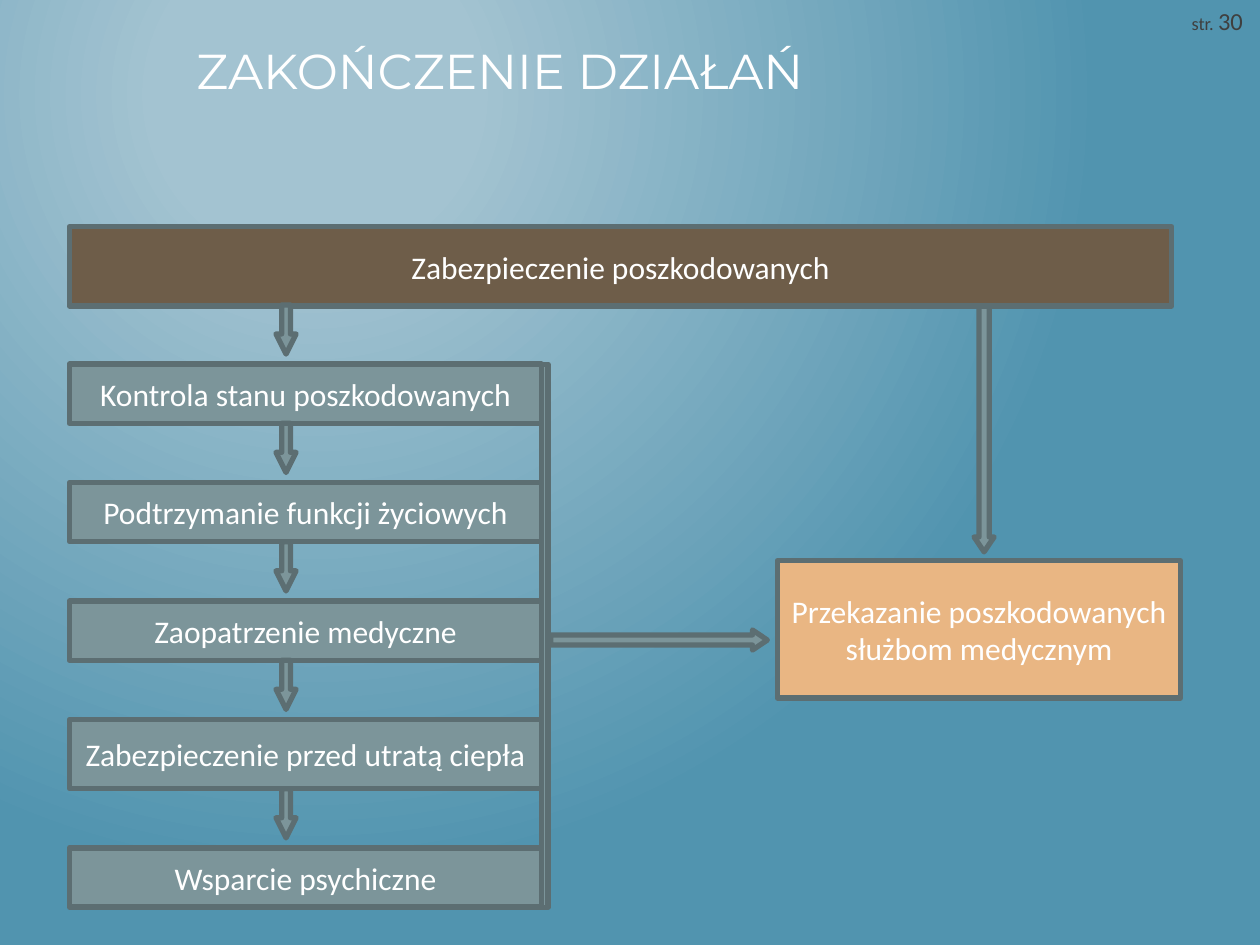
from lxml import etree
from pptx import Presentation
from pptx.dml.color import RGBColor
from pptx.enum import shapes, text
from pptx.oxml import ns
from pptx.util import Inches, Pt

WHITE = RGBColor(0xFF, 0xFF, 0xFF)
GREY = RGBColor(0x3F, 0x3F, 0x3F)
BROWN = RGBColor(0x6E, 0x5D, 0x49)
SLATE = RGBColor(0x7C, 0x95, 0x9A)
ORANGE = RGBColor(0xE9, 0xB6, 0x83)
OUTLINE = RGBColor(0x5C, 0x6E, 0x72)
GLOW = RGBColor(0xA3, 0xC3, 0xD1)
BLUE = RGBColor(0x51, 0x94, 0xAF)

STEPS = [  # wording, box height
    ("Kontrola stanu poszkodowanych", 0.47),
    ("Podtrzymanie funkcji życiowych", 0.47),
    ("Zaopatrzenie medyczne", 0.47),
    ("Zabezpieczenie przed utratą ciepła", 0.55),
    ("Wsparcie psychiczne", 0.47),
]
STEP_GAP = 0.47
ARROW_WIDTH = 0.16
SHORT_ARROW = 0.39
SHORT_HEAD = (0.433, 1)
LONG_HEAD = (0.5, 0.74)


def add_run(paragraph, wording, size, color, font="Calibri"):
    run = paragraph.add_run()
    run.text = wording
    run.font.name = font
    run.font.size = Pt(size)
    run.font.color.rgb = color


def paint_background(slide):
    """Radial glow near the top left corner."""
    fill = slide.background.fill
    fill.gradient()
    for stop, color, position in zip(fill.gradient_stops, (GLOW, BLUE), (0.2, 1)):
        stop.color.rgb = color
        stop.position = position
    grad = slide.background._cSld.find(".//" + ns.qn("a:gradFill"))
    linear = grad.find(ns.qn("a:lin"))
    radial = etree.Element(ns.qn("a:path"), path="circle")
    etree.SubElement(radial, ns.qn("a:fillToRect"),
                     l="50000", t="20000", r="100000", b="100000")
    grad.replace(linear, radial)


def add_label(slide, left, top, width, height, runs):
    frame = slide.shapes.add_textbox(
        Inches(left), Inches(top), Inches(width), Inches(height)).text_frame
    frame.word_wrap = True
    frame.margin_right = 0
    for run in runs:
        add_run(frame.paragraphs[0], *run)


def add_block(slide, kind, left, top, width, height, color):
    block = slide.shapes.add_shape(
        kind, Inches(left), Inches(top), Inches(width), Inches(height))
    block.shadow.inherit = False
    block.fill.solid()
    block.fill.fore_color.rgb = color
    block.line.color.rgb = OUTLINE
    block.line.width = Pt(3)
    return block


def add_box(slide, left, top, width, height, color, wording=None):
    box = add_block(slide, shapes.MSO_SHAPE.RECTANGLE, left, top, width, height, color)
    if wording:
        frame = box.text_frame
        frame.word_wrap = True
        frame.vertical_anchor = text.MSO_ANCHOR.MIDDLE
        frame.paragraphs[0].alignment = text.PP_ALIGN.CENTER
        add_run(frame.paragraphs[0], wording, 18, WHITE)


def add_arrow(slide, left, top, length, head):
    arrow = add_block(slide, shapes.MSO_SHAPE.RIGHT_ARROW,
                      left, top, length, ARROW_WIDTH, SLATE)
    arrow.adjustments[0], arrow.adjustments[1] = head
    return arrow


def add_down_arrow(slide, center, top, length, head):
    """Arrow turned downwards, with its tail at (center, top)."""
    arrow = add_arrow(slide, center - length / 2,
                      top + (length - ARROW_WIDTH) / 2, length, head)
    arrow.rotation = 90


def add_steps(slide, left, top, width):
    """Column of steps, each reached by an arrow, closed by a bar on the right."""
    y = top
    for wording, height in STEPS:
        add_box(slide, left, y, width, height, SLATE, wording)
        add_down_arrow(slide, left + 1.72, y - STEP_GAP, SHORT_ARROW, SHORT_HEAD)
        y += height + STEP_GAP
    add_box(slide, left + width, top, 0.05, y - STEP_GAP - top, SLATE)


def add_handover(slide, left, top, width, height):
    """Handover box with the arrows that lead to it."""
    add_box(slide, left, top, width, height, ORANGE,
            "Przekazanie poszkodowanych służbom medycznym")
    add_arrow(slide, left - 1.8, top + 0.55, 1.72, LONG_HEAD)
    add_down_arrow(slide, left + 1.64, top - 2.02, 1.95, LONG_HEAD)


def main():
    prs = Presentation()
    prs.slide_width, prs.slide_height = Inches(10), Inches(7.5)
    slide = prs.slides.add_slide(prs.slide_layouts[6])
    paint_background(slide)

    # Title and page number
    add_label(slide, 1.46, 0.27, 7.8, 0.96,
              [("ZAKOŃCZENIE DZIAŁAŃ", 28, WHITE, "Montserrat")])
    add_label(slide, 9.36, 0, 0.64, 0.27,
              [("str. ", 10.5, GREY), ("30", 14, GREY)])

    # Flow chart
    add_box(slide, 0.55, 1.8, 8.75, 0.63, BROWN, "Zabezpieczenie poszkodowanych")
    add_steps(slide, 0.55, 2.89, 3.75)
    add_handover(slide, 6.17, 4.45, 3.2, 1.09)

    prs.save("out.pptx")


if __name__ == "__main__":
    main()
